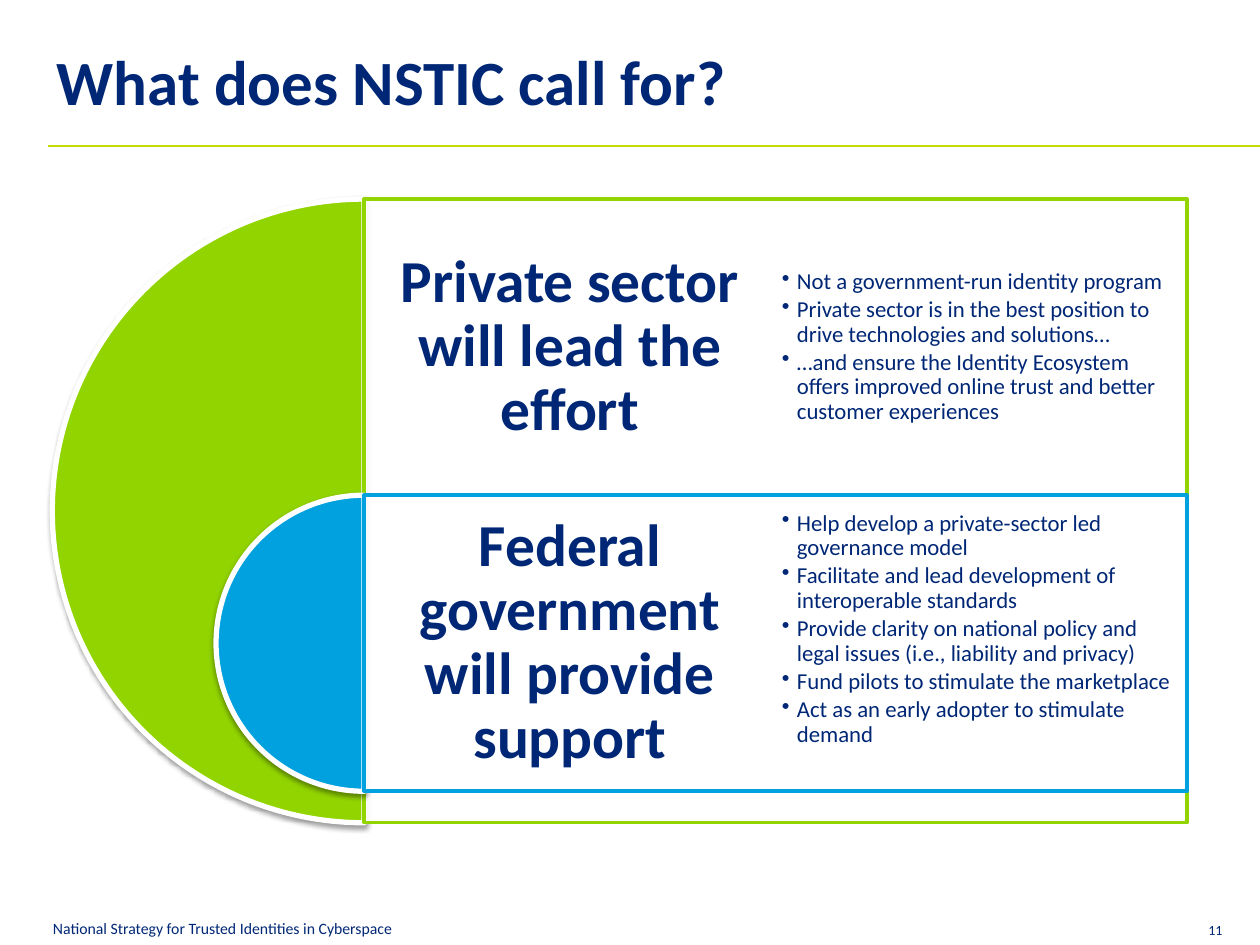
import pptx
import pptx.util
import pptx.dml.color
import pptx.enum.shapes
import pptx.enum.text
import pptx.oxml
import pptx.oxml.ns

Inches = pptx.util.Inches
Pt = pptx.util.Pt
ALIGN = pptx.enum.text.PP_ALIGN
ANCHOR = pptx.enum.text.MSO_ANCHOR
SHAPE = pptx.enum.shapes.MSO_SHAPE
RGB = pptx.dml.color.RGBColor.from_string
COLORS = {"navy": "002776", "green": "92D400", "blue": "00A1DE",
          "lime": "C7DB00", "white": "FFFFFF", "black": "000000"}


def append_xml(parent, xml):
    namespace = pptx.oxml.ns.nsdecls("a")
    element = pptx.oxml.parse_xml(xml.replace(">", f" {namespace}>", 1))
    parent.append(element)


def add_text(page, place, lines, size, bold=False, inset=0, bottom=None,
             anchor=ANCHOR.TOP, bullets=False, **paragraph_format):
    box = page.shapes.add_textbox(*map(Inches, place))
    frame = box.text_frame
    frame_format = {
        "word_wrap": True, "vertical_anchor": anchor,
        "margin_left": Inches(inset), "margin_right": Inches(inset),
        "margin_top": Inches(inset),
        "margin_bottom": Inches(inset if bottom is None else bottom),
    }
    for name, value in frame_format.items():
        setattr(frame, name, value)
    for index, line in enumerate(lines):
        para = frame.add_paragraph() if index else frame.paragraphs[0]
        for name, value in paragraph_format.items():
            setattr(para, name, value)
        if bullets:
            properties = para._p.get_or_add_pPr()
            properties.set("marL", str(Inches(0.12)))
            properties.set("indent", str(-Inches(0.12)))
            append_xml(properties, '<a:buChar char="•"></a:buChar>')
        span = para.add_run()
        span.text = line
        span_format = {"name": "Calibri", "size": Pt(size), "bold": bold}
        for name, value in span_format.items():
            setattr(span.font, name, value)
        span.font.color.rgb = RGB(COLORS["navy"])


deck = pptx.Presentation()
deck.slide_width, deck.slide_height = Inches(10), Inches(7.5)
page = deck.slides.add_slide(deck.slide_layouts[6])

add_text(page, (9.59, 7.32, 0.29, 0.13), ["11"], 8, anchor=ANCHOR.BOTTOM)
add_text(page, (0.42, 7.29, 4.72, 0.15),
         ["National Strategy for Trusted Identities in Cyberspace"], 9,
         anchor=ANCHOR.BOTTOM)
add_text(page, (0.45, 0.52, 9.11, 0.45), ["What does NSTIC call for?"], 36,
         bold=True, line_spacing=Pt(30))

rule = page.shapes.add_connector(
    pptx.enum.shapes.MSO_CONNECTOR.STRAIGHT,
    Inches(0.38), Inches(1.16), Inches(10), Inches(1.16))
rule.line.color.rgb = RGB(COLORS["lime"])
rule.line.width = Pt(0.75)
append_xml(rule._element.spPr, "<a:effectLst></a:effectLst>")

panel_left, panel_width = 2.89, 6.53
column_width, row_height = panel_width / 2, 2.35
sections = [
    ("green", 1.58, 4.95, 0.05, "Private sector will lead the effort", [
        "Not a government-run identity program",
        "Private sector is in the best position to drive technologies and solutions…",
        "…and ensure the Identity Ecosystem offers improved online trust and better customer experiences",
    ]),
    ("blue", 3.93, 2.35, 0.27, "Federal government will provide support", [
        "Help develop a private-sector led governance model",
        "Facilitate and lead development of interoperable standards",
        "Provide clarity on national policy and legal issues (i.e., liability and privacy)",
        "Fund pilots to stimulate the marketplace",
        "Act as an early adopter to stimulate demand",
    ]),
]

for color, top, height, bottom, heading, points in sections:
    pie = page.shapes.add_shape(
        SHAPE.PIE, Inches(panel_left - height / 2), Inches(top),
        Inches(height), Inches(height))
    pie.adjustments[0], pie.adjustments[1] = 54, 162
    panel = page.shapes.add_shape(
        SHAPE.RECTANGLE, Inches(panel_left), Inches(top),
        Inches(panel_width), Inches(height))
    for shape, fill, line, width in ((pie, color, "white", 3),
                                     (panel, "white", color, 2)):
        shape.fill.solid()
        shape.fill.fore_color.rgb = RGB(COLORS[fill])
        shape.line.color.rgb = RGB(COLORS[line])
        shape.line.width = Pt(width)
        shape.shadow.inherit = False
    append_xml(
        pie._element.spPr.find(pptx.oxml.ns.qn("a:effectLst")),
        f'<a:outerShdw blurRad="{Pt(3.1)}" dist="{Pt(1.6)}" dir="5400000" '
        f'rotWithShape="0"><a:srgbClr val="{COLORS["black"]}">'
        '<a:alpha val="38000"/></a:srgbClr></a:outerShdw>')
    append_xml(panel._element.spPr.find(".//" + pptx.oxml.ns.qn("a:srgbClr")),
               '<a:alpha val="90000"></a:alpha>')

    add_text(page, (panel_left, top, column_width, row_height), [heading], 34,
             bold=True, inset=0.14, anchor=ANCHOR.MIDDLE,
             alignment=ALIGN.CENTER, line_spacing=0.9)
    add_text(page, (panel_left + column_width, top, column_width, row_height),
             points, 13, inset=0.05, bottom=bottom, anchor=ANCHOR.MIDDLE,
             bullets=True, line_spacing=0.9, space_after=Pt(2))

deck.save("out.pptx")
